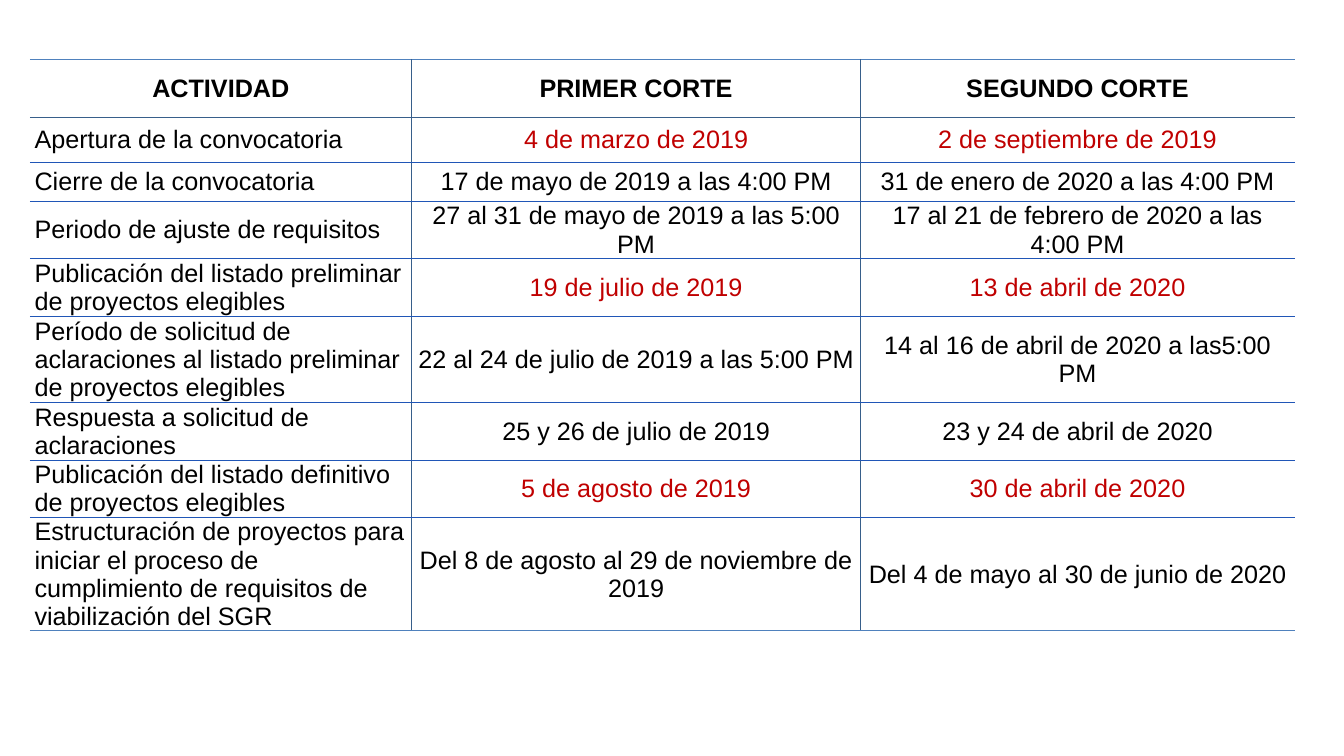
from pptx import Presentation
from pptx.dml.color import RGBColor
from pptx.enum.text import MSO_ANCHOR, PP_ALIGN
from pptx.oxml import parse_xml
from pptx.oxml.ns import nsdecls
from pptx.util import Cm, Pt

# Content
HEADINGS = ("ACTIVIDAD", "PRIMER CORTE", "SEGUNDO CORTE")
ACTIVITIES = [
    ("Apertura de la convocatoria", "4 de marzo de 2019", "2 de septiembre de 2019"),
    ("Cierre de la convocatoria", "17 de mayo de 2019 a las 4:00 PM",
     "31 de enero de 2020 a las 4:00 PM"),
    ("Periodo de ajuste de requisitos", "27 al 31 de mayo de 2019 a las 5:00 PM",
     "17 al 21 de febrero de 2020 a las 4:00 PM"),
    ("Publicación del listado preliminar de proyectos elegibles",
     "19 de julio de 2019", "13 de abril de 2020"),
    ("Período de solicitud de aclaraciones al listado preliminar de proyectos elegibles",
     "22 al 24 de julio de 2019 a las 5:00 PM", "14 al 16 de abril de 2020 a las5:00 PM"),
    ("Respuesta a solicitud de aclaraciones",
     "25 y 26 de julio de 2019", "23 y 24 de abril de 2020"),
    ("Publicación del listado definitivo de proyectos elegibles",
     "5 de agosto de 2019", "30 de abril de 2020"),
    ("Estructuración de proyectos para iniciar el proceso de cumplimiento de "
     "requisitos de viabilización del SGR",
     "Del 8 de agosto al 29 de noviembre de 2019", "Del 4 de mayo al 30 de junio de 2020"),
]
ROWS = [HEADINGS] + ACTIVITIES
KEY_DATE_ROWS = {1, 4, 7}

# Layout in centimetres
LEFT, TOP = 0.75, 1.5
COLUMN_WIDTHS = (9.63, 11.3, 10.95)
ROW_HEIGHTS = (1.47, 1.12, 0.99, 1.44, 1.45, 2.18, 1.45, 1.45, 2.84)
SIDE_MARGIN = 0.12

# Colours
BLACK, RED = "000000", "C00000"
OUTER_LINE, HEADING_LINE, ROW_LINE = "4F81BD", "375E8A", "2056B7"


def colour(hex_text):
    return RGBColor.from_string(hex_text)


def add_border(cell, side, line_colour):
    fill = "<a:noFill/>"
    if line_colour:
        fill = f'<a:solidFill><a:srgbClr val="{line_colour}"/></a:solidFill>'
    cell._tc.get_or_add_tcPr().append(parse_xml(
        f'<a:ln{side} {nsdecls("a")} w="{Pt(1)}">{fill}</a:ln{side}>'))


def row_line(index):
    """Colour of the horizontal line above the row with this index."""
    if index in (0, len(ROWS)):
        return OUTER_LINE
    return HEADING_LINE if index == 1 else ROW_LINE


def fill_cell(cell, text, row, column):
    # Borders come before the fill in the cell properties
    add_border(cell, "L", HEADING_LINE if column > 0 else None)
    add_border(cell, "R", HEADING_LINE if column < len(HEADINGS) - 1 else None)
    add_border(cell, "T", row_line(row))
    add_border(cell, "B", row_line(row + 1))
    cell.fill.background()

    cell.margin_left = cell.margin_right = Cm(SIDE_MARGIN)
    cell.margin_top = cell.margin_bottom = 0
    cell.vertical_anchor = MSO_ANCHOR.MIDDLE

    cell.text = text
    paragraph = cell.text_frame.paragraphs[0]
    centred = row == 0 or column > 0
    paragraph.alignment = PP_ALIGN.CENTER if centred else PP_ALIGN.LEFT
    font = paragraph.font
    font.name, font.size, font.bold = "Arial", Pt(18), row == 0
    key_date = row in KEY_DATE_ROWS and column > 0
    font.color.rgb = colour(RED if key_date else BLACK)


def main():
    presentation = Presentation()
    presentation.slide_width, presentation.slide_height = Cm(33.87), Cm(19.05)
    slide = presentation.slides.add_slide(presentation.slide_layouts[6])

    # Schedule table
    table = slide.shapes.add_table(
        len(ROWS), len(HEADINGS), Cm(LEFT), Cm(TOP),
        Cm(sum(COLUMN_WIDTHS)), Cm(sum(ROW_HEIGHTS))).table
    table.first_row = table.horz_banding = False
    for column, width in zip(table.columns, COLUMN_WIDTHS):
        column.width = Cm(width)
    for row, height in zip(table.rows, ROW_HEIGHTS):
        row.height = Cm(height)
    for row, texts in enumerate(ROWS):
        for column, text in enumerate(texts):
            fill_cell(table.cell(row, column), text, row, column)

    presentation.save("out.pptx")


if __name__ == "__main__":
    main()
